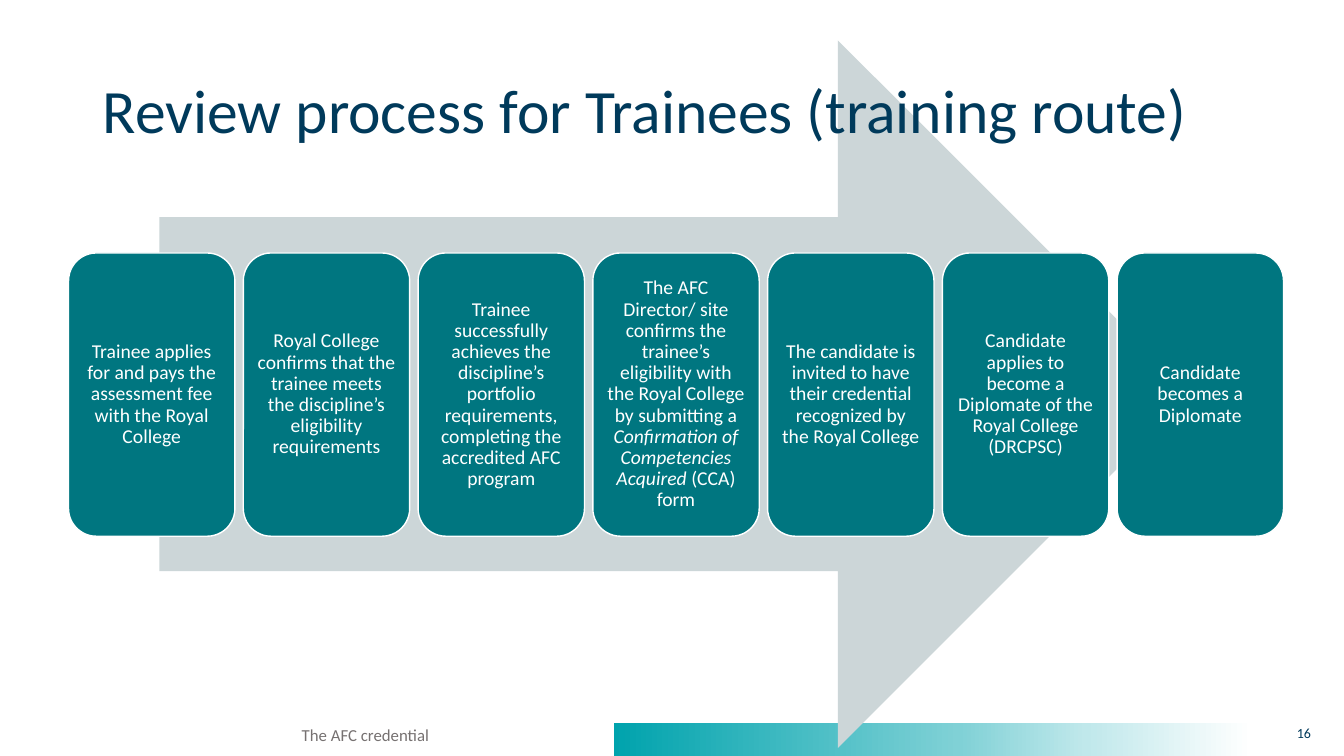
from lxml import etree
from pptx import Presentation
from pptx.dml.color import RGBColor
from pptx.enum.shapes import MSO_SHAPE
from pptx.enum.text import MSO_ANCHOR, PP_ALIGN
from pptx.oxml.ns import qn
from pptx.util import Inches, Pt

RECTANGLE = MSO_SHAPE.RECTANGLE
ARROW = MSO_SHAPE.RIGHT_ARROW
ROUNDED = MSO_SHAPE.ROUNDED_RECTANGLE
LEFT, CENTER, RIGHT = PP_ALIGN.LEFT, PP_ALIGN.CENTER, PP_ALIGN.RIGHT
TOP, MIDDLE = MSO_ANCHOR.TOP, MSO_ANCHOR.MIDDLE

NAVY, TEAL, WHITE, SILVER, GRAY = "003A5B", "007680", "FFFFFF", "CCD6D8", "767171"
FOOTER_STOPS = [(0, "00A3AD"), (54, "80D1D6"), (74, "C0E8EB"), (100, WHITE)]

STEPS = [
    ["Trainee applies for and pays the assessment fee with the Royal College"],
    ["Royal College confirms that the trainee meets the discipline’s eligibility requirements"],
    ["Trainee successfully achieves the discipline’s portfolio requirements, "
     "completing the accredited AFC program"],
    ["The AFC Director/ site confirms the trainee’s eligibility with the Royal College "
     "by submitting a ", "Confirmation of Competencies Acquired ", "(CCA) form"],
    ["The candidate is invited to have their credential recognized by the Royal College"],
    ["Candidate applies to become a Diplomate of the Royal College (DRCPSC)"],
    ["Candidate becomes a Diplomate"],
]
STEP_LEFT, STEP_WIDTH, LAST_STEP_LEFT = 0.68, 1.65, 11.08
STEP_PITCH = (LAST_STEP_LEFT - STEP_LEFT) / (len(STEPS) - 1)


def color(value):
    return RGBColor.from_string(value)


class SlideBuilder:
    font_name = "Calibri"

    def __init__(self, page):
        self.page = page

    def shape(self, kind, left, top, width, height, fill):
        shape = self.page.shapes.add_shape(
            kind, Inches(left), Inches(top), Inches(width), Inches(height))
        shape.shadow.inherit = False
        shape.fill.solid()
        shape.fill.fore_color.rgb = color(fill)
        shape.line.fill.background()
        return shape

    def gradient_bar(self, left, top, width, height, stops):
        bar = self.shape(RECTANGLE, left, top, width, height, WHITE)
        bar.fill.gradient()
        bar.fill.gradient_angle = 0
        stop_list = bar._element.spPr.find(qn("a:gradFill")).find(qn("a:gsLst"))
        for old_stop in list(stop_list):
            stop_list.remove(old_stop)
        for percent, value in stops:
            stop = etree.SubElement(stop_list, qn("a:gs"), pos=str(percent * 1000))
            etree.SubElement(stop, qn("a:srgbClr"), val=value)

    def fill_text(self, frame, spans, size, ink, align, anchor, spacing=1.0):
        frame.word_wrap = True
        frame.vertical_anchor = anchor
        para = frame.paragraphs[0]
        para.alignment = align
        para.line_spacing = spacing
        para.font.name = self.font_name
        para.font.size = Pt(size)
        para.font.color.rgb = color(ink)
        for position, text in enumerate(spans):
            span = para.add_run()
            span.text = text
            if position == 1:
                span.font.italic = True

    def text(self, left, top, width, height, text, size, ink, align, anchor=TOP, spacing=1.0):
        box = self.page.shapes.add_textbox(
            Inches(left), Inches(top), Inches(width), Inches(height))
        self.fill_text(box.text_frame, [text], size, ink, align, anchor, spacing)

    def step(self, left, spans):
        card = self.shape(ROUNDED, left, 2.51, STEP_WIDTH, 2.81, TEAL)
        card.line.color.rgb = color(WHITE)
        card.line.width = Pt(1)
        frame = card.text_frame
        frame.margin_left = frame.margin_right = Inches(0.06)
        frame.margin_top = frame.margin_bottom = Inches(0.06)
        self.fill_text(frame, spans, 14, WHITE, CENTER, MIDDLE, 0.9)


def main():
    deck = Presentation()
    deck.slide_width, deck.slide_height = Inches(13.33), Inches(7.5)
    builder = SlideBuilder(deck.slides.add_slide(deck.slide_layouts[6]))

    builder.gradient_bar(6.09, 7.17, 6.33, 0.33, FOOTER_STOPS)
    builder.shape(ARROW, 1.58, 0.4, 10.24, 7.02, SILVER)
    for index, spans in enumerate(STEPS):
        builder.step(STEP_LEFT + index * STEP_PITCH, spans)
    builder.text(0.92, 0.4, 11.5, 1.45, "Review process for Trainees (training route)",
                 44, NAVY, LEFT, MIDDLE, 0.9)
    builder.text(1.41, 7.14, 4.43, 0.35, "The AFC credential", 12, GRAY, CENTER)
    builder.text(12.42, 7.14, 0.68, 0.35, "16", 10, NAVY, RIGHT)
    deck.save("out.pptx")


if __name__ == "__main__":
    main()
